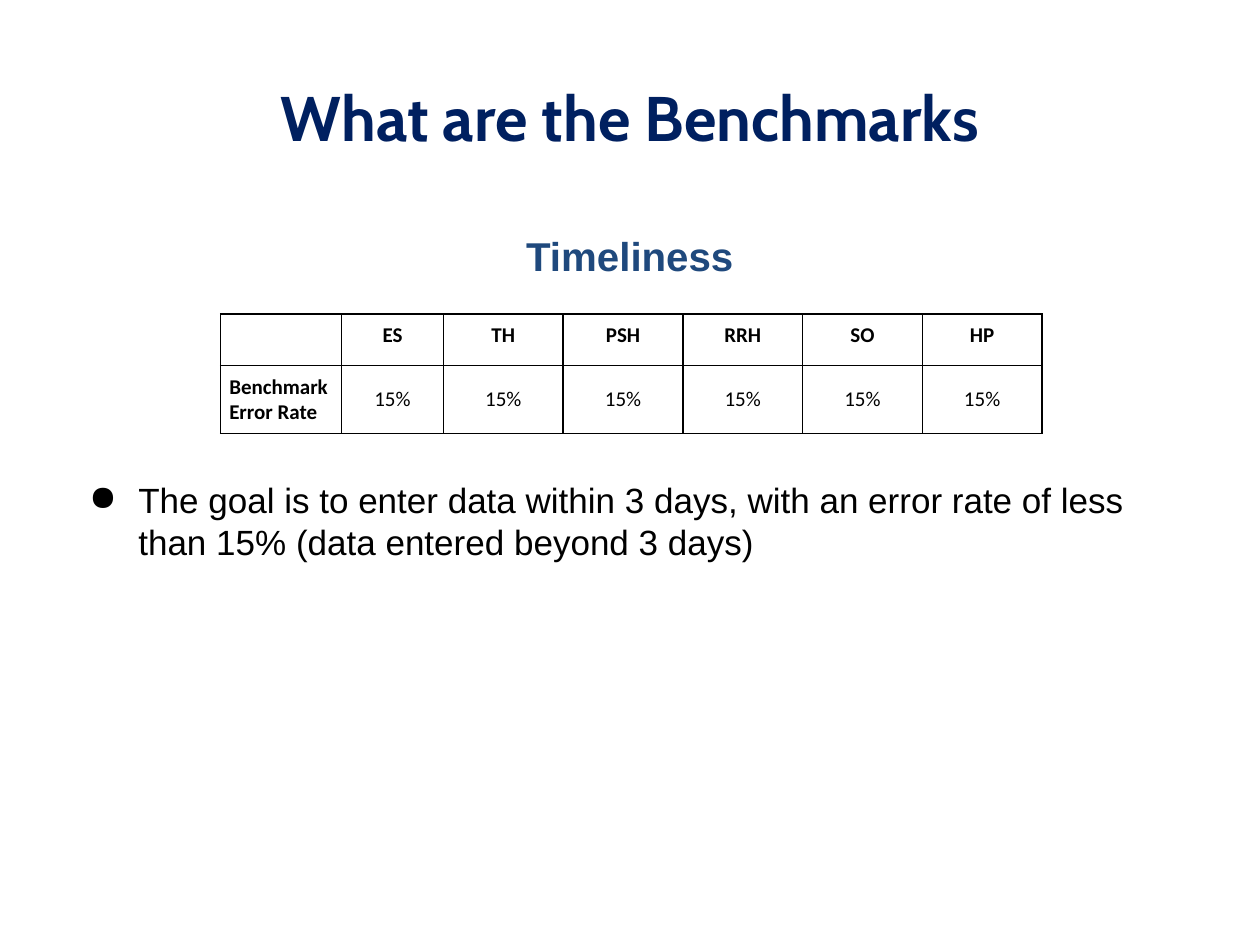
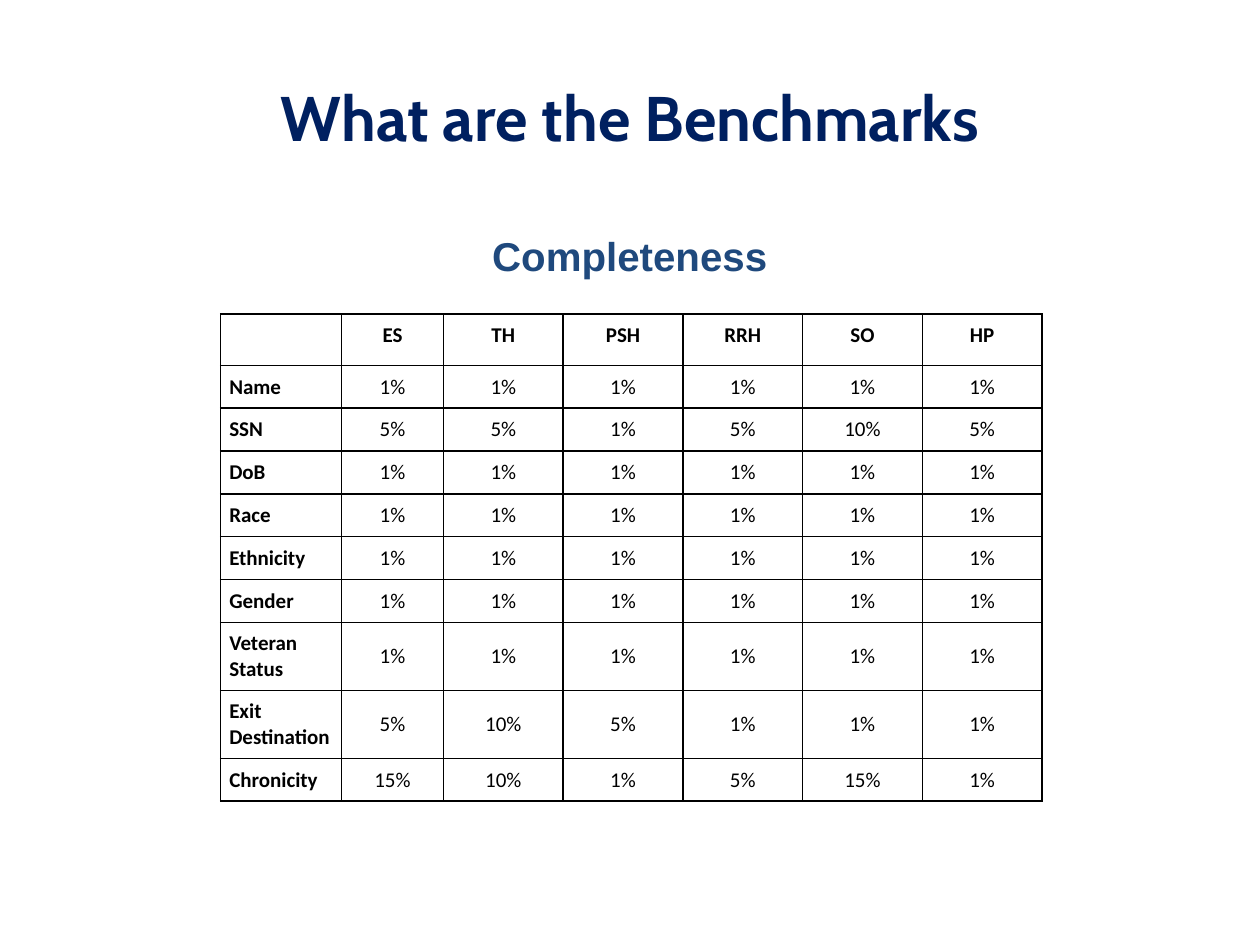
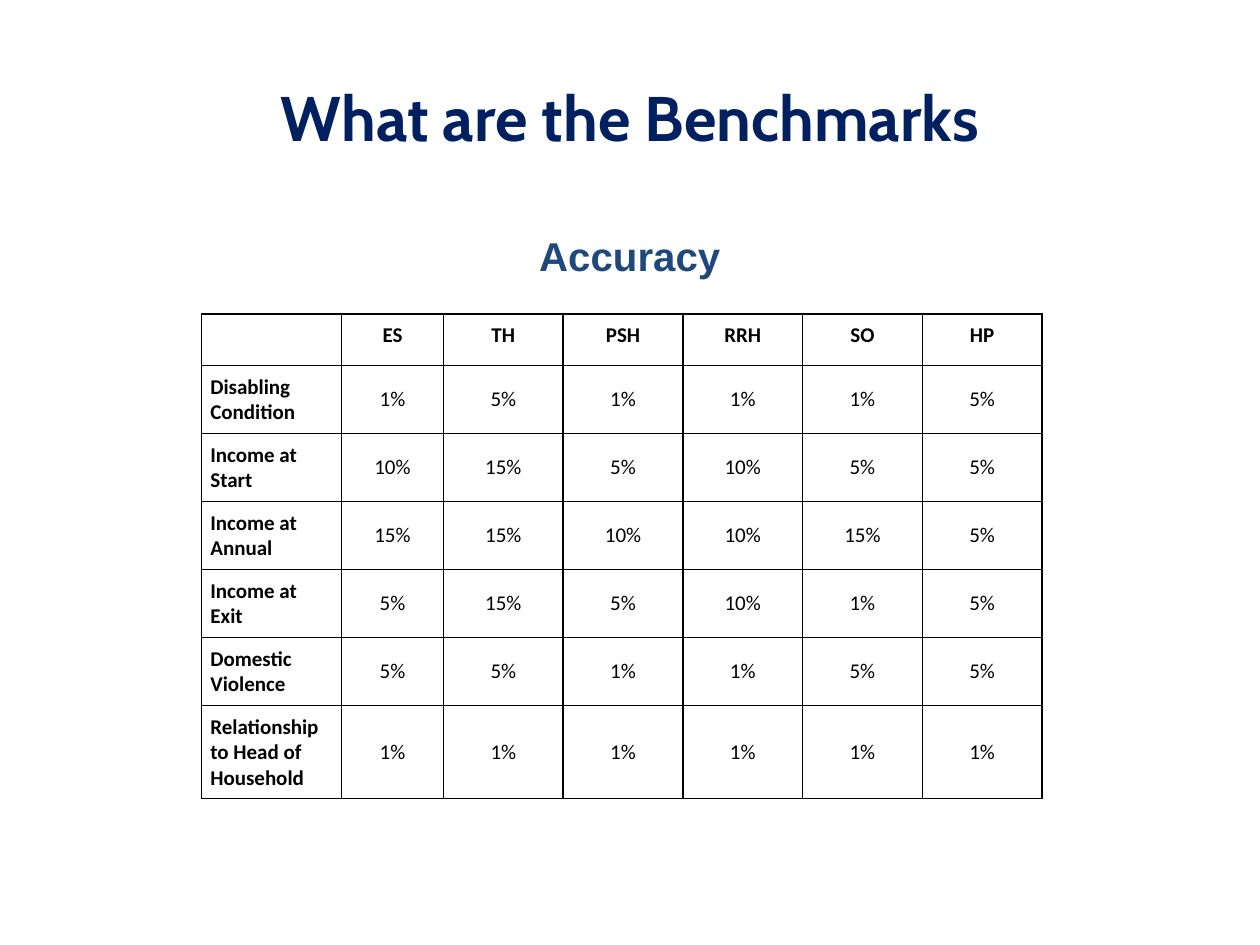
from lxml import etree
from pptx import Presentation
from pptx.dml.color import RGBColor
from pptx.enum.text import MSO_ANCHOR, MSO_AUTO_SIZE, PP_ALIGN
from pptx.oxml.ns import qn
from pptx.util import Inches, Pt

COLORS = {"title": "002060", "heading": "1F497D", "text": "000000"}
MARGIN, CONTENT_WIDTH = 0.5, 9
TABLE_TOP, TABLE_RIGHT = 2.49, 8.27
VALUE_WIDTHS = [0.81] + [0.95] * 5
CELL_INSET, LINE_HEIGHT, HEADER_HEIGHT = 0.07, 0.2, 0.41
PROGRAMS = ["ES", "TH", "PSH", "RRH", "SO", "HP"]

# Each row: label, lines the label takes, percentage per program
SECTIONS = [
    ("Timeliness", 0.96, [
        ("Benchmark Error Rate", 2, [15] * 6),
    ]),
    ("Completeness", 0.96, [
        ("Name", 1, [1] * 6),
        ("SSN", 1, [5, 5, 1, 5, 10, 5]),
        ("DoB", 1, [1] * 6),
        ("Race", 1, [1] * 6),
        ("Ethnicity", 1, [1] * 6),
        ("Gender", 1, [1] * 6),
        ("Veteran Status", 2, [1] * 6),
        ("Exit Destination", 2, [5, 10, 5, 1, 1, 1]),
        ("Chronicity", 1, [15, 10, 1, 5, 15, 1]),
    ]),
    ("Accuracy", 1.11, [
        ("Disabling Condition", 2, [1, 5, 1, 1, 1, 5]),
        ("Income at Start", 2, [10, 15, 5, 10, 5, 5]),
        ("Income at Annual", 2, [15, 15, 10, 10, 15, 5]),
        ("Income at Exit", 2, [5, 15, 5, 10, 1, 5]),
        ("Domestic Violence", 2, [5, 5, 1, 1, 5, 5]),
        ("Relationship to Head of Household", 3, [1] * 6),
    ]),
]
GOAL = ("The goal is to enter data within 3 days, with an error rate of less "
        "than 15% (data entered beyond 3 days)")


def write(frame, text, font_name, size, color, bold=False, align=PP_ALIGN.LEFT):
    """Fill a text frame with one formatted paragraph and return it."""
    frame.word_wrap = True
    paragraph = frame.paragraphs[0]
    paragraph.text = text
    paragraph.alignment = align
    font = paragraph.font
    font.name, font.size, font.bold = font_name, Pt(size), bold
    font.color.rgb = RGBColor.from_string(COLORS[color])
    return paragraph


def add_borders(cell):
    properties = cell._tc.get_or_add_tcPr()
    for side in ("lnL", "lnR", "lnT", "lnB"):
        line = etree.SubElement(properties, qn(f"a:{side}"), w=str(Pt(1)))
        fill = etree.SubElement(line, qn("a:solidFill"))
        etree.SubElement(fill, qn("a:srgbClr"), val=COLORS["text"])


presentation = Presentation()
presentation.slide_width, presentation.slide_height = Inches(10), Inches(7.5)
title_only = presentation.slide_layouts[5]

for heading, label_width, rows in SECTIONS:
    slide = presentation.slides.add_slide(title_only)
    title = slide.shapes.title
    title.left, title.top = Inches(MARGIN), Inches(0.3)
    title.width, title.height = Inches(CONTENT_WIDTH), Inches(1.25)
    title.text_frame.auto_size = MSO_AUTO_SIZE.NONE
    title.text_frame.vertical_anchor = MSO_ANCHOR.MIDDLE
    write(title.text_frame, "What are the Benchmarks", "Cabin", 36, "title",
          True, PP_ALIGN.CENTER)

    heading_box = slide.shapes.add_textbox(
        Inches(MARGIN), Inches(1.79), Inches(CONTENT_WIDTH), Inches(0.5))
    write(heading_box.text_frame, heading, "Arial", 23, "heading",
          True, PP_ALIGN.CENTER)

    widths = [label_width] + VALUE_WIDTHS
    heights = [HEADER_HEIGHT] + [
        2 * CELL_INSET + LINE_HEIGHT * lines for _, lines, _ in rows]
    table = slide.shapes.add_table(
        len(heights), len(widths), Inches(TABLE_RIGHT - sum(widths)),
        Inches(TABLE_TOP), Inches(sum(widths)), Inches(sum(heights))).table
    table.first_row = table.horz_banding = False
    for column, width in zip(table.columns, widths):
        column.width = Inches(width)
    for row, height in zip(table.rows, heights):
        row.height = Inches(height)

    grid = [[""] + PROGRAMS] + [
        [label] + [f"{value}%" for value in values] for label, _, values in rows]
    for row_index, texts in enumerate(grid):
        for column_index, text in enumerate(texts):
            cell = table.cell(row_index, column_index)
            add_borders(cell)
            cell.fill.background()
            if not text:
                continue
            cell.margin_left = cell.margin_right = Inches(CELL_INSET)
            cell.margin_top = cell.margin_bottom = Inches(CELL_INSET)
            is_value = row_index > 0 and column_index > 0
            if is_value:
                cell.vertical_anchor = MSO_ANCHOR.MIDDLE
            write(cell.text_frame, text, "Calibri", 12, "text", not is_value,
                  PP_ALIGN.CENTER if column_index else PP_ALIGN.LEFT)

goal_box = presentation.slides[0].shapes.add_textbox(
    Inches(MARGIN), Inches(3.75), Inches(CONTENT_WIDTH), Inches(0.8))
goal_properties = goal_box.text_frame.paragraphs[0]._p.get_or_add_pPr()
goal_properties.set("marL", str(Inches(0.5)))
goal_properties.set("indent", str(Inches(-0.39)))
etree.SubElement(goal_properties, qn("a:buChar"), char="●")
write(goal_box.text_frame, GOAL, "Arial", 20, "text")

presentation.save("out.pptx")
